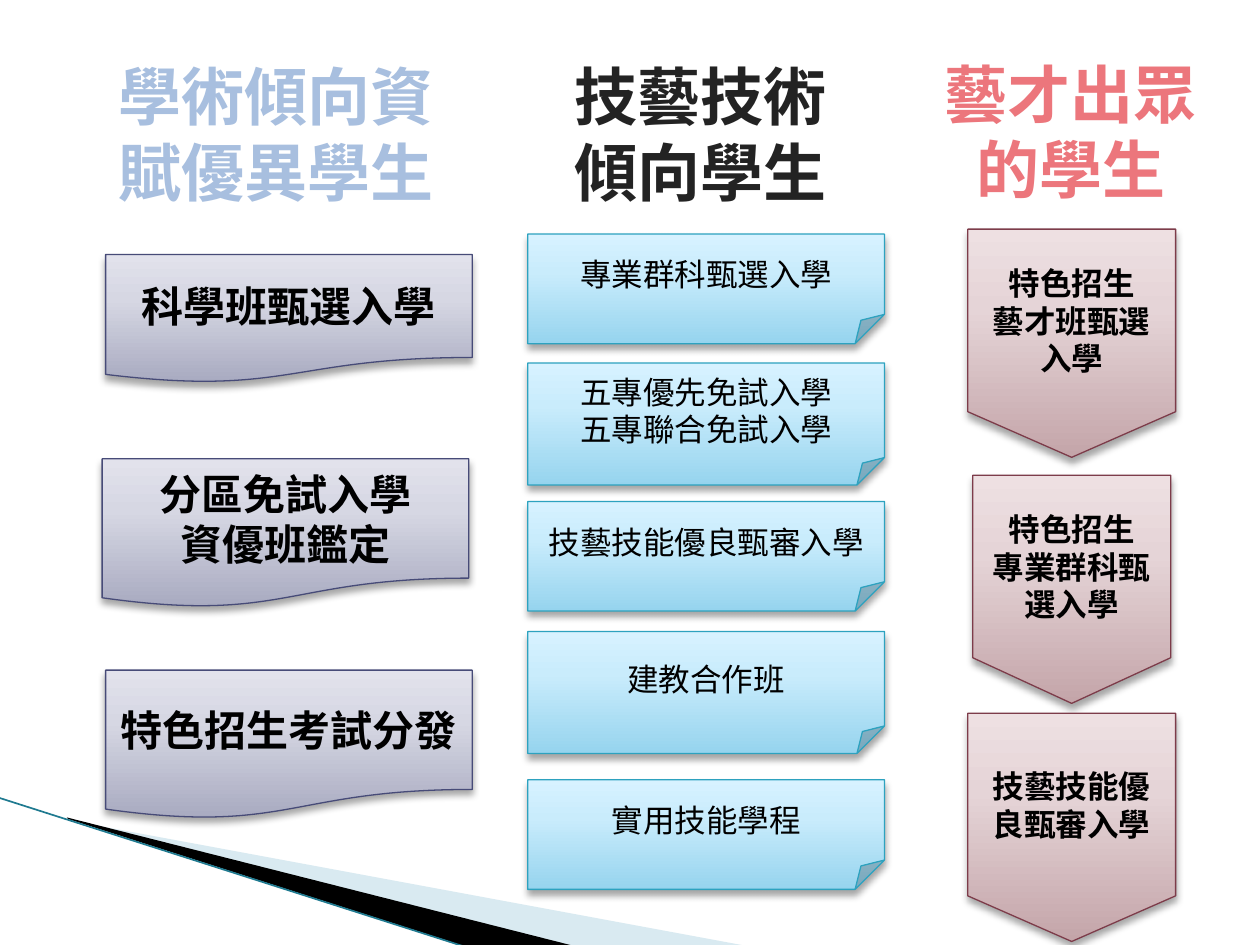
from lxml.etree import SubElement
from pptx import Presentation
from pptx.dml.color import RGBColor
from pptx.enum.shapes import MSO_CONNECTOR, MSO_SHAPE as Preset
from pptx.enum.text import MSO_ANCHOR as Anchor, PP_ALIGN as Align
from pptx.oxml.ns import qn
from pptx.util import Cm, Pt

FONT = "Noto Sans CJK SC"

HEADINGS = [
    (["學術傾向資賦優異學生"], (2.13, 1.04, 7.39), "A8BFDF", Align.LEFT, True),
    (["技藝技術", "傾向學生"], (10.74, 1.04, 6.76), "232323", Align.CENTER, True),
    (["藝才出眾", "的學生"], (18.77, 0.99, 5.64), "EC767C", Align.CENTER, False),
]
HEADING_HEIGHT = 3.33

COLUMNS = [
    {
        "preset": Preset.FLOWCHART_DOCUMENT, "line": "474B78", "size": 24, "bold": True,
        "stops": ["A8AAC0", "D6D7E3", "E2E2EC"],
        "cards": [
            (["科學班甄選入學"], (2.13, 5.13, 7.39, 2.59)),
            (["分區免試入學", "資優班鑑定"], (2.06, 9.25, 7.39, 3)),
            (["特色招生考試分發"], (2.13, 13.51, 7.39, 3)),
        ],
    },
    {
        "preset": Preset.FOLDED_CORNER, "line": "2DA2BF", "size": 18, "bold": False,
        "stops": ["96D4EE", "C9ECFC", "D7F2FF"],
        "cards": [
            (["專業群科甄選入學"], (10.64, 4.72, 7.19, 2.21)),
            (["五專優先免試入學", "五專聯合免試入學"], (10.64, 7.32, 7.19, 2.46)),
            (["技藝技能優良甄審入學"], (10.64, 10.11, 7.19, 2.21)),
            (["建教合作班"], (10.64, 12.73, 7.19, 2.46)),
            (["實用技能學程"], (10.64, 15.72, 7.19, 2.21)),
        ],
    },
    {
        "preset": Preset.FLOWCHART_OFFPAGE_CONNECTOR, "line": "7D3C4A", "size": 18, "bold": True,
        "stops": ["C4A5A9", "E5D4D7", "EEE0E2"],
        "cards": [
            (["特色招生", "藝才班甄選入學"], (19.51, 4.62, 4.19, 4.6)),
            (["特色招生", "專業群科甄選入學"], (19.61, 9.58, 3.99, 4.6)),
            (["技藝技能優良甄審入學"], (19.51, 14.38, 4.19, 4.6)),
        ],
    },
]
STOP_POSITIONS = [0, 65, 100]
FOLD_ADJUSTMENT = {2.21: 26700, 2.46: 22500}

WEDGES = [
    ([(1.4, 16.54), (15.11, 19.08), (11.58, 19.08), (1.4, 16.51)], "A0CBDC", 40),
    ([(1.35, 16.48), (11.61, 19.08), (9.45, 19.1), (1.37, 16.51)], "000000", 100),
]
EDGE = (-0.03, 16.08, 9.42, 19.1)
EDGE_COLOR = "1F7A90"


def color(value):
    return RGBColor.from_string(value)


def add_color(parent, value, opacity=100):
    element = SubElement(parent, qn("a:srgbClr"), val=value)
    if opacity < 100:
        SubElement(element, qn("a:alpha"), val=str(opacity * 1000))


def write_text(shape, lines, size=18, bold=False, fill="000000", align=Align.CENTER,
               anchor=Anchor.MIDDLE, wrap=True):
    frame = shape.text_frame
    frame.word_wrap = wrap
    frame.vertical_anchor = anchor
    for index, line in enumerate(lines):
        paragraph = frame.add_paragraph() if index else frame.paragraphs[0]
        paragraph.alignment = align
        run = paragraph.add_run()
        run.text = line
        run.font.size = Pt(size)
        run.font.bold = bold
        run.font.color.rgb = color(fill)
        run.font.name = FONT
        SubElement(run.font._element, qn("a:ea"), typeface=FONT)


def fill_gradient(shape, stops):
    shape.fill.gradient()
    gradient = shape._element.spPr.find(qn("a:gradFill"))
    stop_list = gradient.find(qn("a:gsLst"))
    for stop in list(stop_list):
        stop_list.remove(stop)
    for position, value in zip(STOP_POSITIONS, stops):
        add_color(SubElement(stop_list, qn("a:gs"), pos=str(position * 1000)), value)
    gradient.find(qn("a:lin")).set("ang", str(270 * 60000))


def add_shadow(shape):
    shape.shadow.inherit = False
    effects = shape._element.spPr.find(qn("a:effectLst"))
    shadow = SubElement(effects, qn("a:outerShdw"), blurRad=str(Pt(4)), dist=str(Pt(3)),
                        dir=str(90 * 60000), rotWithShape="0")
    add_color(shadow, "000000", 35)


def fold_corner(shape, amount):
    geometry = shape._element.spPr.find(qn("a:prstGeom"))
    SubElement(geometry.find(qn("a:avLst")), qn("a:gd"), name="adj", fmla=f"val {amount}")


def add_wedge(slide, points, fill, opacity):
    (start_x, start_y), *rest = [(Cm(x), Cm(y)) for x, y in points]
    builder = slide.shapes.build_freeform(start_x, start_y)
    builder.add_line_segments(rest, close=True)
    shape = builder.convert_to_shape()
    shape.shadow.inherit = False
    shape.line.fill.background()
    shape.fill.solid()
    shape.fill.fore_color.rgb = color(fill)
    if opacity < 100:
        value = shape._element.spPr.find(qn("a:solidFill")).find(qn("a:srgbClr"))
        SubElement(value, qn("a:alpha"), val=str(opacity * 1000))


def add_card(slide, column, lines, box):
    shape = slide.shapes.add_shape(column["preset"], *map(Cm, box))
    if column["preset"] == Preset.FOLDED_CORNER:
        fold_corner(shape, FOLD_ADJUSTMENT[box[3]])
    fill_gradient(shape, column["stops"])
    shape.line.color.rgb = color(column["line"])
    shape.line.width = Pt(0.75)
    add_shadow(shape)
    write_text(shape, lines, size=column["size"], bold=column["bold"])


def main():
    presentation = Presentation()
    presentation.slide_width, presentation.slide_height = Cm(25.4), Cm(19.05)
    slide = presentation.slides.add_slide(presentation.slide_layouts[6])

    for points, fill, opacity in WEDGES:
        add_wedge(slide, points, fill, opacity)
    edge = slide.shapes.add_connector(MSO_CONNECTOR.STRAIGHT, *map(Cm, EDGE))
    edge.line.color.rgb = color(EDGE_COLOR)
    edge.line.width = Pt(0.95)
    SubElement(edge._element.spPr, qn("a:effectLst"))

    for lines, box, fill, align, wrap in HEADINGS:
        heading = slide.shapes.add_textbox(*map(Cm, (*box, HEADING_HEIGHT)))
        write_text(heading, lines, size=36, bold=True, fill=fill, align=align,
                   anchor=Anchor.TOP, wrap=wrap)

    for column in COLUMNS:
        for lines, box in column["cards"]:
            add_card(slide, column, lines, box)

    presentation.save("out.pptx")


if __name__ == "__main__":
    main()
